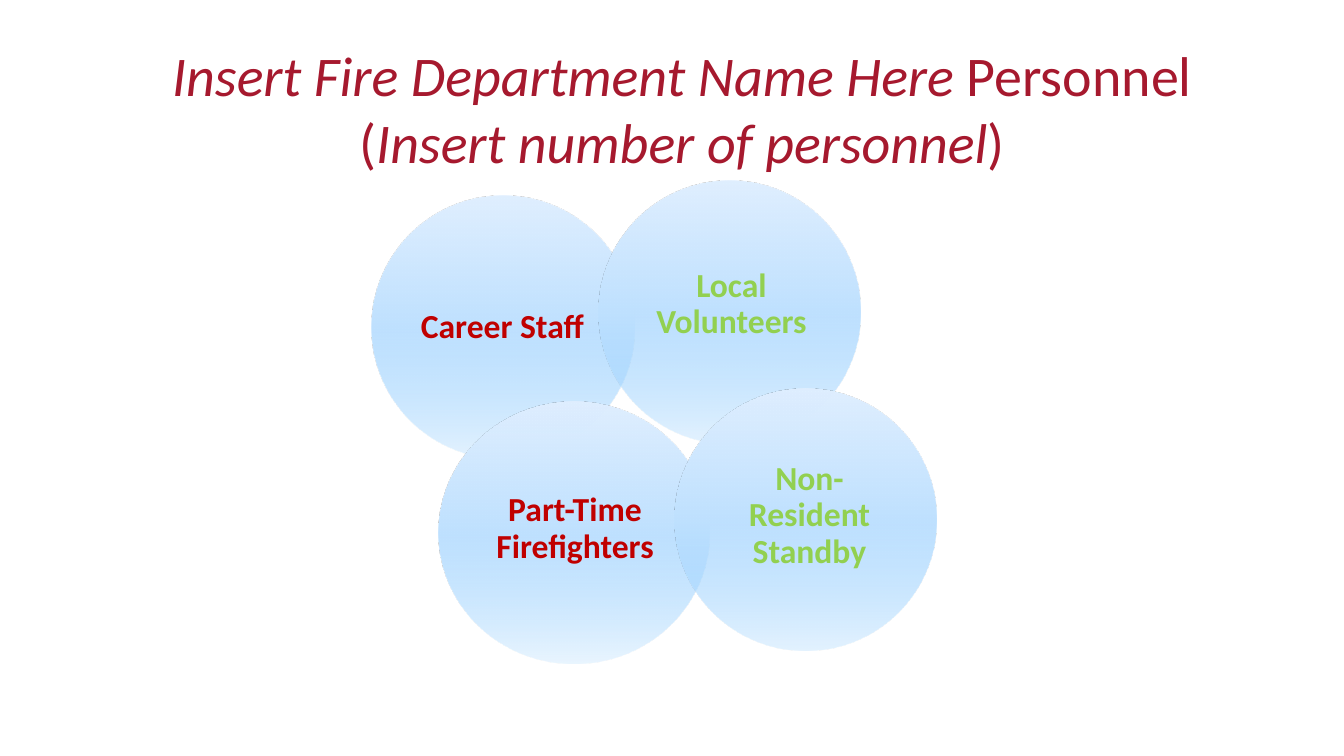
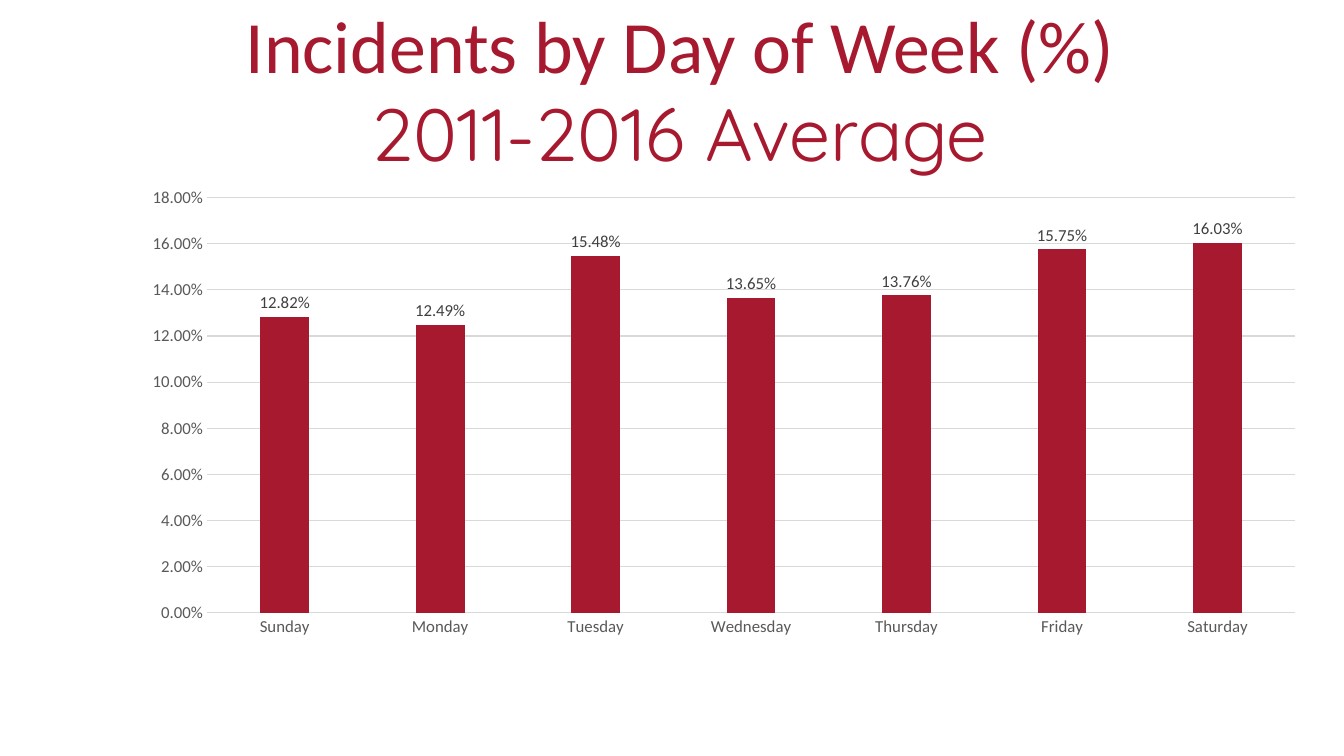
from dataclasses import dataclass

from lxml import etree
from pptx import Presentation, util as u
from pptx.chart.data import CategoryChartData
from pptx.dml.color import RGBColor
from pptx.enum import chart as ch, shapes, text
from pptx.oxml.ns import qn

WIDTH, HEIGHT = 1344, 756
EMU_PER_PX = 12192000 / WIDTH


def px(*lengths):
    return [u.Emu(round(n * EMU_PER_PX)) for n in lengths]


@dataclass(frozen=True)
class Theme:
    font: str = "Calibri"
    accent_font: str = "Quicksand"
    brand: str = "A6192E"
    paid: str = "C00000"
    volunteer: str = "92D050"
    axis_text: str = "595959"
    label_text: str = "404040"
    grid: str = "D9D9D9"
    bubble: tuple = ((0, "96D0FF"), (50, "BFE1FF"), (100, "E0EFFF"))
    title_size: float = 40
    large_title_size: float = 52.7
    bubble_size: float = 24
    chart_size: float = 12


def style_font(font, size, color, name, bold=False, italic=False):
    font.size, font.name = u.Pt(size), name
    font.bold, font.italic = bold, italic
    font.color.rgb = RGBColor.from_string(color)


def add_run(p, content, **style):
    """Add a run; a newline in content becomes a line break."""
    for i, line in enumerate(content.split("\n")):
        if i:
            p.add_line_break()
        if line:
            r = p.add_run()
            r.text = line
            style_font(r.font, **style)


class Deck:
    """Holds the theme, the presentation and the current slide."""

    def __init__(self, theme):
        self.theme = theme
        self.prs = Presentation()
        self.prs.slide_width, self.prs.slide_height = px(WIDTH, HEIGHT)
        self.s = None

    def slide(self):
        self.s = self.prs.slides.add_slide(self.prs.slide_layouts[6])

    def text_box(self, box, inset=(10, 5)):
        """Add a centred text box and return its paragraph."""
        tf = self.s.shapes.add_textbox(*px(*box)).text_frame
        tf.word_wrap = True
        tf.vertical_anchor = text.MSO_ANCHOR.MIDDLE
        tf.margin_left, tf.margin_top = px(*inset)
        tf.margin_right, tf.margin_bottom = px(*inset)
        p = tf.paragraphs[0]
        p.alignment = text.PP_ALIGN.CENTER
        return p

    def title(self, box, size, runs):
        p = self.text_box(box)
        for content, style in runs:
            add_run(p, content, **{"size": size, "color": self.theme.brand,
                                   "name": self.theme.font, **style})

    def bubble(self, box, label_box, label, color, opacity=26):
        sp = self.s.shapes.add_shape(shapes.MSO_SHAPE.OVAL, *px(*box))
        sp.shadow.inherit = False
        sp.line.fill.background()
        sp.fill.gradient()
        sp.fill.gradient_angle = 90
        stops = next(sp._element.iter(qn("a:gsLst")))
        for stop in list(stops):
            stops.remove(stop)
        for pos, rgb in self.theme.bubble:
            stop = etree.SubElement(stops, qn("a:gs"), pos=str(pos * 1000))
            clr = etree.SubElement(stop, qn("a:srgbClr"), val=rgb)
            if pos == 0:
                etree.SubElement(clr, qn("a:alpha"), val=str(opacity * 1000))
        p = self.text_box(label_box, inset=(10, 10))
        p.line_spacing = 0.9
        add_run(p, label, size=self.theme.bubble_size, color=color,
                name=self.theme.font, bold=True)

    def column_chart(self, box, categories, values, top, step, plot):
        t = self.theme
        data = CategoryChartData(number_format="0.00%")
        data.categories = categories
        data.add_series("Series 1", values)
        chart = self.s.shapes.add_chart(
            ch.XL_CHART_TYPE.COLUMN_CLUSTERED, *px(*box), data).chart
        style_font(chart.font, t.chart_size, t.axis_text, t.font)
        chart.has_legend = chart.has_title = False

        grid = RGBColor.from_string(t.grid)
        cat, val = chart.category_axis, chart.value_axis
        for axis in (cat, val):
            axis.major_tick_mark = axis.minor_tick_mark = ch.XL_TICK_MARK.NONE
            style_font(axis.tick_labels.font, t.chart_size, t.axis_text, t.font)
        val.minimum_scale, val.maximum_scale, val.major_unit = 0, top, step
        val.tick_labels.number_format = "0.00%"
        val.tick_labels.number_format_is_linked = False
        val.format.line.fill.background()
        for line in (cat.format.line, val.major_gridlines.format.line):
            line.color.rgb, line.width = grid, u.Pt(0.75)

        bars = chart.plots[0]
        bars.gap_width, bars.overlap, bars.vary_by_categories = 219, -27, False
        fill = bars.series[0].format.fill
        fill.solid()
        fill.fore_color.rgb = RGBColor.from_string(t.brand)
        bars.has_data_labels = True
        labels = bars.data_labels
        labels.show_value = True
        labels.position = ch.XL_LABEL_POSITION.OUTSIDE_END
        labels.number_format, labels.number_format_is_linked = "0.00%", False
        style_font(labels.font, t.chart_size, t.label_text, t.font)
        self.place_plot(chart, plot)

    @staticmethod
    def place_plot(chart, plot):
        """Fix the inner plot area, given as fractions x, y, w, h."""
        area = next(chart._chartSpace.iter(qn("c:plotArea")))
        for old in area.findall(qn("c:layout")):
            area.remove(old)
        layout = etree.Element(qn("c:layout"))
        area.insert(0, layout)
        manual = etree.SubElement(layout, qn("c:manualLayout"))
        settings = [("layoutTarget", "inner"), ("xMode", "edge"),
                    ("yMode", "edge"), *zip("xywh", plot)]
        for tag, value in settings:
            etree.SubElement(manual, qn("c:" + tag), val=str(value))


def personnel_slide(deck):
    t = deck.theme
    deck.slide()
    deck.title((89, 52, 1186, 112), t.title_size, [
        ("Insert Fire Department Name Here", {"italic": True}),
        (" Personnel (", {}),
        ("Insert number of personnel", {"italic": True}),
        (")", {}),
    ])
    deck.bubble((372, 196, 262, 262), (410, 235, 185, 185),
                "Career Staff", t.paid)
    deck.bubble((599, 181, 262, 262), (630, 234, 203, 141),
                "Local Volunteers", t.volunteer)
    deck.bubble((439, 402, 270, 262), (477, 444, 196, 170),
                "Part-Time Firefighters", t.paid, opacity=20)
    deck.bubble((675, 389, 262, 262), (720, 434, 179, 164),
                "Non-Resident Standby", t.volunteer)


def incidents_slide(deck):
    deck.slide()
    deck.title((68, 25, 1224, 126), deck.theme.large_title_size, [
        ("Incidents by Day of Week (%)\n", {}),
        ("2011-2016 Average", {"name": deck.theme.accent_font}),
    ])
    incidents = {
        "Sunday": 0.1282, "Monday": 0.1249, "Tuesday": 0.1548,
        "Wednesday": 0.1365, "Thursday": 0.1376, "Friday": 0.1575,
        "Saturday": 0.1603,
    }
    deck.column_chart((136, 174, 1183, 472), list(incidents),
                      list(incidents.values()), top=0.18, step=0.02,
                      plot=(0.06, 0.05, 0.92, 0.88))


def main():
    deck = Deck(Theme())
    personnel_slide(deck)
    incidents_slide(deck)
    deck.prs.save("out.pptx")


if __name__ == "__main__":
    main()
